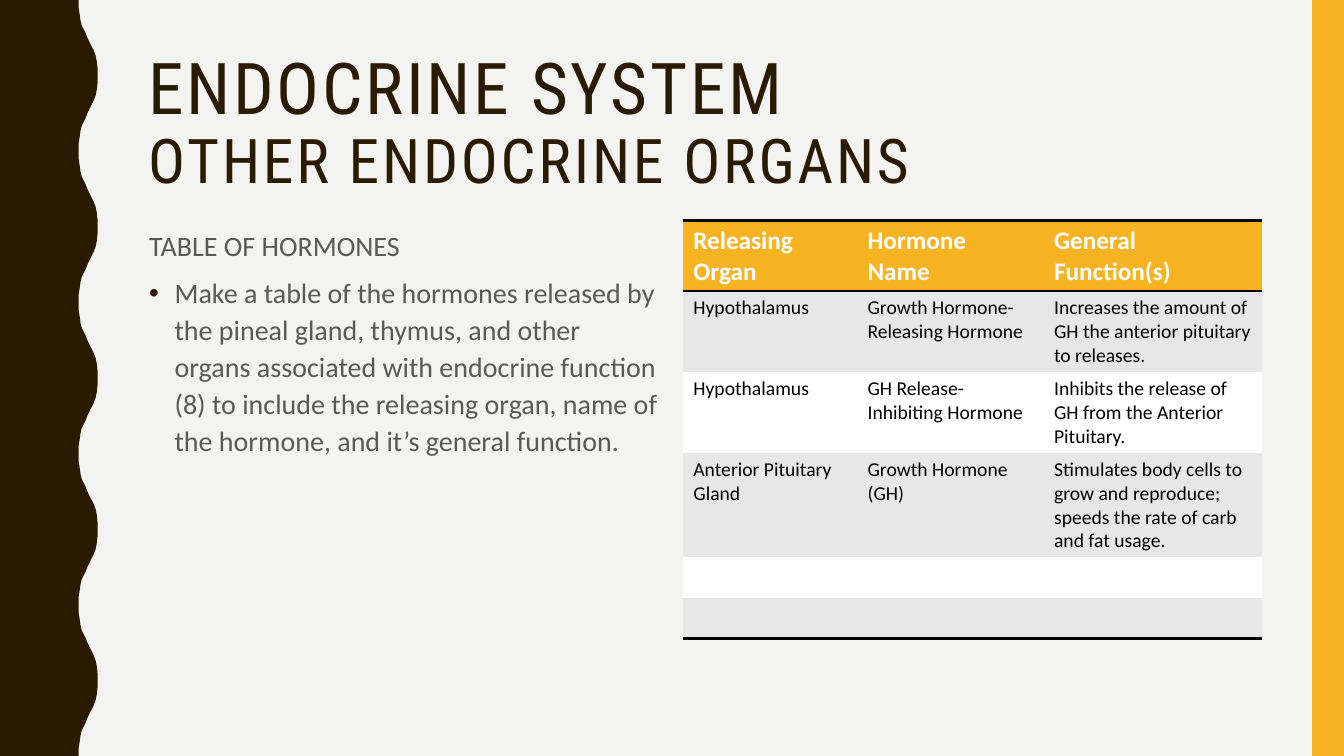
from lxml import etree
from pptx import Presentation
from pptx.dml.color import RGBColor as RGB
from pptx.enum.shapes import MSO_SHAPE as SHAPE
from pptx.enum.text import MSO_ANCHOR as ANCHOR, MSO_AUTO_SIZE as AUTO, PP_ALIGN as ALIGN
from pptx.oxml import parse_xml
from pptx.oxml.ns import nsdecls, qn
from pptx.util import Cm, Pt

COLORS = {
    "bg": "F3F3F2", "brown": "2A1A00", "gold": "F8B323", "gray": "595959",
    "band": "E7E7E7", "white": "FFFFFF", "black": "000000",
}
TITLE_FONT = "Roboto Condensed"
BODY_FONT = "Calibri"
WIDTH, HEIGHT = 33.87, 19.05
NO_STYLE = "{2D5ABB26-0587-4C30-8999-92F81FD0307C}"

WAVE_PERIOD = 3.81
HALF_WAVE = [
    (1.98, 0), (1.98, 0.18), (2.01, 0.36), (2.03, 0.51), (2.06, 0.64),
    (2.11, 0.74), (2.16, 0.84), (2.21, 0.97), (2.26, 1.07), (2.31, 1.17),
    (2.36, 1.27), (2.41, 1.4), (2.44, 1.55), (2.46, 1.73), (2.46, 1.9),
]

TITLE = [("ENDOCRINE SYSTEM", 51), ("OTHER ENDOCRINE ORGANS", 44)]
HEADING = "TABLE OF HORMONES"
TASK = (
    "Make a table of the hormones released by the pineal gland, thymus, and "
    "other organs associated with endocrine function (8) to include the "
    "releasing organ, name of the hormone, and it’s general function."
)
COLUMNS = [4.39, 4.7, 5.49]
ROW_HEIGHT = 1.03
ROWS = [
    ["Releasing Organ", "Hormone Name", "General Function(s)"],
    ["Hypothalamus", "Growth Hormone-Releasing Hormone",
     "Increases the amount of GH the anterior pituitary to releases."],
    ["Hypothalamus", "GH Release-Inhibiting Hormone",
     "Inhibits the release of GH from the Anterior Pituitary."],
    ["Anterior Pituitary Gland", "Growth Hormone (GH)",
     "Stimulates body cells to grow and reproduce; speeds the rate of carb "
     "and fat usage."],
    ["", "", ""],
    ["", "", ""],
]


def rgb(name):
    return RGB.from_string(COLORS[name])


def apply(obj, values):
    for name, value in values.items():
        setattr(obj, name, value)


def add_run(p, text, size, color, font=BODY_FONT, bold=False):
    r = p.add_run()
    r.text = text
    apply(r.font, {"name": font, "size": Pt(size), "bold": bold})
    r.font.color.rgb = rgb(color)
    return r


def paint(sp, color):
    sp.shadow.inherit = False
    sp.fill.solid()
    sp.fill.fore_color.rgb = rgb(color)
    sp.line.fill.background()


def add_wave(s):
    rise = HALF_WAVE + [(x, WAVE_PERIOD - y) for x, y in reversed(HALF_WAVE)]
    points = [
        (Cm(x), Cm(y + i * WAVE_PERIOD)) for i in range(5) for x, y in rise
    ]
    builder = s.shapes.build_freeform(0, 0)
    builder.add_line_segments(points + [(0, Cm(HEIGHT))], close=True)
    paint(builder.convert_to_shape(), "brown")


def add_side_bar(s):
    bar = s.shapes.add_shape(SHAPE.RECTANGLE, Cm(33.07), 0, Cm(0.8), Cm(HEIGHT))
    paint(bar, "gold")


def format_title(s):
    sp = s.shapes.title
    apply(sp, {"left": Cm(3.48), "top": Cm(1.07),
               "width": Cm(28.27), "height": Cm(4.14)})
    tf = sp.text_frame
    apply(tf, {"word_wrap": True, "auto_size": AUTO.NONE,
               "vertical_anchor": ANCHOR.MIDDLE})
    p = tf.paragraphs[0]
    apply(p, {"alignment": ALIGN.LEFT, "line_spacing": 0.9})
    for i, (text, size) in enumerate(TITLE):
        if i:
            p.add_line_break()
        r = add_run(p, text, size, "brown", TITLE_FONT)
        r.font._element.set("spc", "200")
    s.shapes._spTree.append(sp._element)


def add_bullet(p, color):
    pPr = p._p.get_or_add_pPr()
    pPr.set("marL", str(Cm(0.64)))
    pPr.set("indent", str(-Cm(0.64)))
    clr = etree.SubElement(pPr, qn("a:buClr"))
    etree.SubElement(clr, qn("a:srgbClr"), val=COLORS[color])
    etree.SubElement(pPr, qn("a:buFont"), typeface="Arial")
    etree.SubElement(pPr, qn("a:buChar"), char="•")


def add_body(s):
    sp = s.shapes.add_textbox(Cm(3.51), Cm(5.56), Cm(13.34), Cm(12.17))
    tf = sp.text_frame
    tf.word_wrap = True
    for p, text in ((tf.paragraphs[0], HEADING), (tf.add_paragraph(), TASK)):
        apply(p, {"line_spacing": 1.1, "space_before": Pt(7)})
        add_run(p, text, 20, "gray")
    add_bullet(p, "brown")


def add_border(cell, side):
    cell._tc.get_or_add_tcPr().append(parse_xml(
        f'<a:{side} {nsdecls("a")} w="{Pt(2)}"><a:solidFill>'
        f'<a:srgbClr val="{COLORS["black"]}"/></a:solidFill></a:{side}>'
    ))


def add_hormone_table(s):
    frame = s.shapes.add_table(
        len(ROWS), len(COLUMNS), Cm(17.22), Cm(5.56),
        Cm(sum(COLUMNS)), Cm(ROW_HEIGHT * len(ROWS)))
    table = frame.table
    table._tbl.tblPr.find(qn("a:tableStyleId")).text = NO_STYLE
    for column, width in zip(table.columns, COLUMNS):
        column.width = Cm(width)
    for i, texts in enumerate(ROWS):
        table.rows[i].height = Cm(ROW_HEIGHT)
        header = i == 0
        fill = "gold" if header else "band" if i % 2 else "white"
        for j, text in enumerate(texts):
            cell = table.cell(i, j)
            if header:
                add_border(cell, "lnT")
            if header or i == len(ROWS) - 1:
                add_border(cell, "lnB")
            cell.fill.solid()
            cell.fill.fore_color.rgb = rgb(fill)
            if text:
                add_run(cell.text_frame.paragraphs[0], text,
                        18 if header else 14,
                        "white" if header else "black", bold=header)


def main():
    prs = Presentation()
    apply(prs, {"slide_width": Cm(WIDTH), "slide_height": Cm(HEIGHT)})
    s = prs.slides.add_slide(prs.slide_layouts[5])
    s.background.fill.solid()
    s.background.fill.fore_color.rgb = rgb("bg")
    add_wave(s)
    add_side_bar(s)
    format_title(s)
    add_body(s)
    add_hormone_table(s)
    prs.save("out.pptx")


if __name__ == "__main__":
    main()
